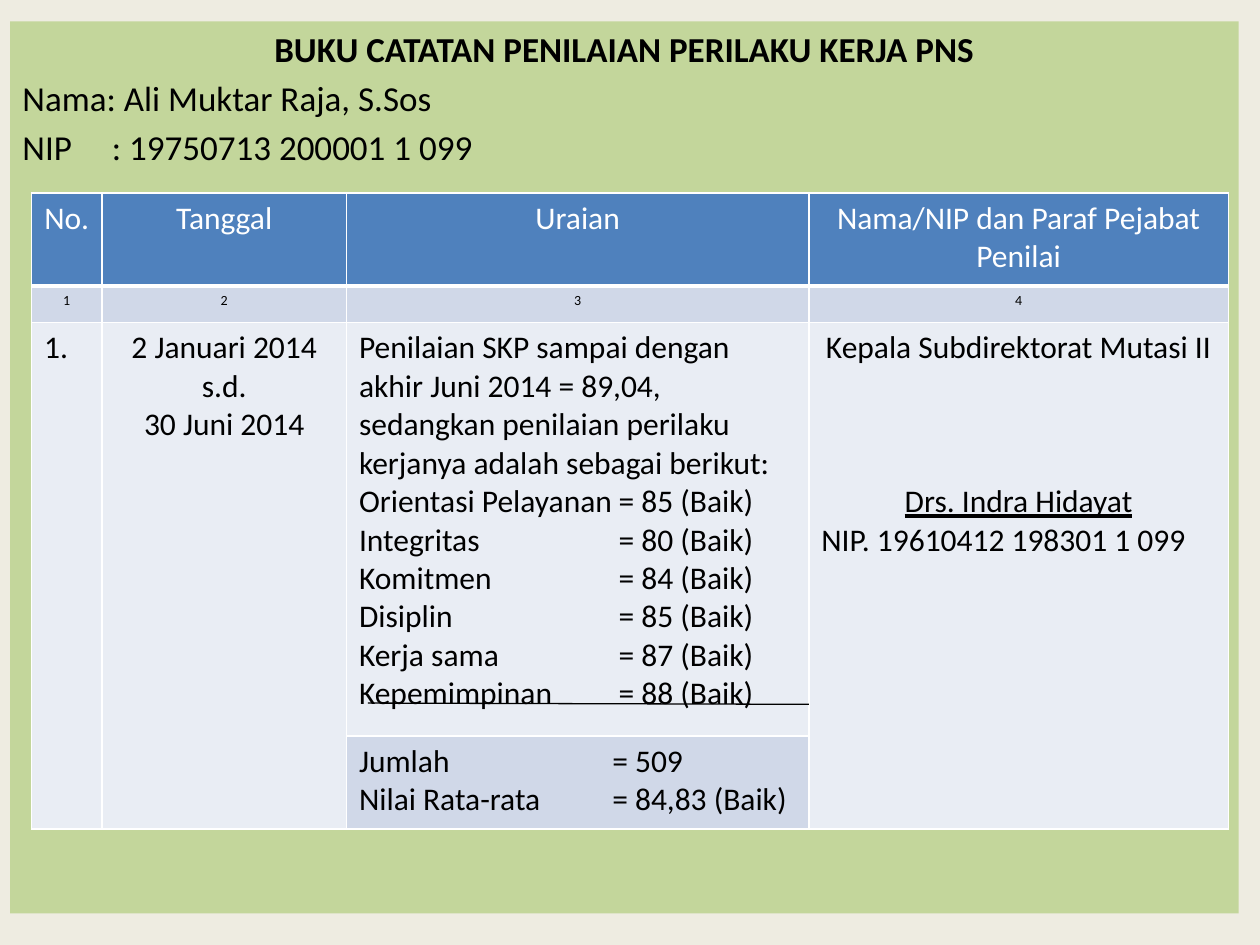
from lxml import etree
from pptx import Presentation
from pptx.dml.color import RGBColor
from pptx.enum.shapes import MSO_CONNECTOR, MSO_SHAPE
from pptx.enum.text import MSO_ANCHOR, PP_ALIGN
from pptx.oxml.ns import qn
from pptx.util import Inches, Pt

LEFT, CENTER, JUSTIFY = PP_ALIGN.LEFT, PP_ALIGN.CENTER, PP_ALIGN.JUSTIFY
TOP = MSO_ANCHOR.TOP
RECT, STRAIGHT = MSO_SHAPE.RECTANGLE, MSO_CONNECTOR.STRAIGHT

COLORS = {
    "background": "EEECE1", "panel": "C3D69B", "header": "4F81BD",
    "band": "D0D8E8", "body": "E9EDF4", "white": "FFFFFF", "black": "000000",
}


def rgb(name):
    return RGBColor.from_string(COLORS[name])


class SlideBuilder:
    font = "Calibri"

    def __init__(self, slide):
        self.slide = slide
        slide.background.fill.solid()
        slide.background.fill.fore_color.rgb = rgb("background")

    def add_text(self, tf, lines, size, color="black"):
        """Each line is (text, alignment, options)."""
        for i, (text, align, opts) in enumerate(lines):
            p = tf.paragraphs[0] if i == 0 else tf.add_paragraph()
            p.alignment = align
            p.space_before = Pt(opts.get("before", 0))
            if "tab" in opts:
                tabs = etree.SubElement(p._p.get_or_add_pPr(), qn("a:tabLst"))
                etree.SubElement(tabs, qn("a:tab"), pos=str(Inches(opts["tab"])), algn="l")
            r = p.add_run()
            r.text = text
            r.font.name, r.font.size = self.font, Pt(size)
            r.font.color.rgb = rgb(color)
            r.font.bold = opts.get("bold", False)
            r.font.underline = opts.get("underline", False)

    def panel(self, x, y, w, h, lines):
        sp = self.slide.shapes.add_shape(RECT, Inches(x), Inches(y), Inches(w), Inches(h))
        sp.shadow.inherit = False
        sp.fill.solid()
        sp.fill.fore_color.rgb = rgb("panel")
        sp.line.fill.background()
        sp.text_frame.word_wrap = True
        sp.text_frame.vertical_anchor = TOP
        self.add_text(sp.text_frame, lines, 20)

    def table(self, x, y, widths, heights):
        table = self.slide.shapes.add_table(
            len(heights), len(widths), Inches(x), Inches(y),
            Inches(sum(widths)), Inches(sum(heights))).table
        table.first_row = table.horz_banding = False
        for col, w in zip(table.columns, widths):
            col.width = Inches(w)
        for row, h in zip(table.rows, heights):
            row.height = Inches(h)
        return table

    def cell(self, cell, fill, top=1, bottom=1):
        cell.fill.solid()
        cell.fill.fore_color.rgb = rgb(fill)
        tcPr = cell._tc.get_or_add_tcPr()
        for i, (side, width) in enumerate(zip("LRTB", (1, 1, top, bottom))):
            ln = etree.Element(qn(f"a:ln{side}"), w=str(Pt(width)))
            solid = etree.SubElement(ln, qn("a:solidFill"))
            etree.SubElement(solid, qn("a:srgbClr"), val=COLORS["white"])
            tcPr.insert(i, ln)

    def line(self, x1, y1, x2, y2):
        c = self.slide.shapes.add_connector(
            STRAIGHT, Inches(x1), Inches(y1), Inches(x2), Inches(y2))
        c.line.color.rgb = rgb("black")
        c.line.width = Pt(0.75)
        etree.SubElement(c._element.spPr, qn("a:effectLst"))


def main():
    prs = Presentation()
    prs.slide_width, prs.slide_height = Inches(10), Inches(7.5)
    s = SlideBuilder(prs.slides.add_slide(prs.slide_layouts[6]))

    # Title and employee details
    s.panel(0.08, 0.17, 9.75, 7.08, [
        ("BUKU CATATAN PENILAIAN PERILAKU KERJA PNS", CENTER, {"bold": True, "before": 4}),
        ("Nama: Ali Muktar Raja, S.Sos", JUSTIFY, {"before": 4}),
        ("NIP\t: 19750713 200001 1 099", JUSTIFY, {"before": 4, "tab": 0.71}),
    ])

    # Table grid: header, column numbers, entry, totals
    table = s.table(0.25, 1.53, [0.56, 1.94, 3.67, 3.33], [0.74, 0.29, 3.28, 0.74])
    for i, fill in enumerate(["header", "band", "body", "band"]):
        for j in range(4):
            s.cell(table.cell(i, j), fill if j == 2 or i < 3 else "body",
                   top=3 if i == 1 else 1, bottom=3 if i == 0 else 1)
    for j in (0, 1, 3):
        table.cell(2, j).merge(table.cell(3, j))

    # Header and column numbers
    headings = ["No.", "Tanggal", "Uraian", "Nama/NIP dan Paraf Pejabat Penilai"]
    for j, heading in enumerate(headings):
        s.add_text(table.cell(0, j).text_frame, [(heading, CENTER, {})], 18, "white")
        s.add_text(table.cell(1, j).text_frame, [(str(j + 1), CENTER, {})], 8)

    # Entry and totals
    scores = [("Orientasi Pelayanan", 85), ("Integritas", 80), ("Komitmen", 84),
              ("Disiplin", 85), ("Kerja sama", 87), ("Kepemimpinan", 88)]
    entries = {
        (2, 0): [("1.", LEFT, {})],
        (2, 1): [("2 Januari 2014 s.d.", CENTER, {}), ("30 Juni 2014", CENTER, {})],
        (2, 2): [("Penilaian SKP sampai dengan akhir Juni 2014 = 89,04, sedangkan "
                  "penilaian perilaku kerjanya adalah sebagai berikut:", LEFT, {})]
                + [(f"{name}\t= {score} (Baik)", LEFT, {"tab": 2.06})
                   for name, score in scores],
        (2, 3): [("Kepala Subdirektorat Mutasi II", CENTER, {}),
                 ("Drs. Indra Hidayat", CENTER, {"underline": True, "before": 66}),
                 ("NIP. 19610412 198301 1 099", LEFT, {})],
        (3, 2): [("Jumlah\t= 509", LEFT, {"tab": 2.01}),
                 ("Nilai Rata-rata\t= 84,83 (Baik)", LEFT, {"tab": 2.01})],
    }
    for (i, j), lines in entries.items():
        s.add_text(table.cell(i, j).text_frame, lines, 18)

    # Sum line under the scores
    s.line(2.92, 5.58, 6.42, 5.59)

    prs.save("out.pptx")


if __name__ == "__main__":
    main()
